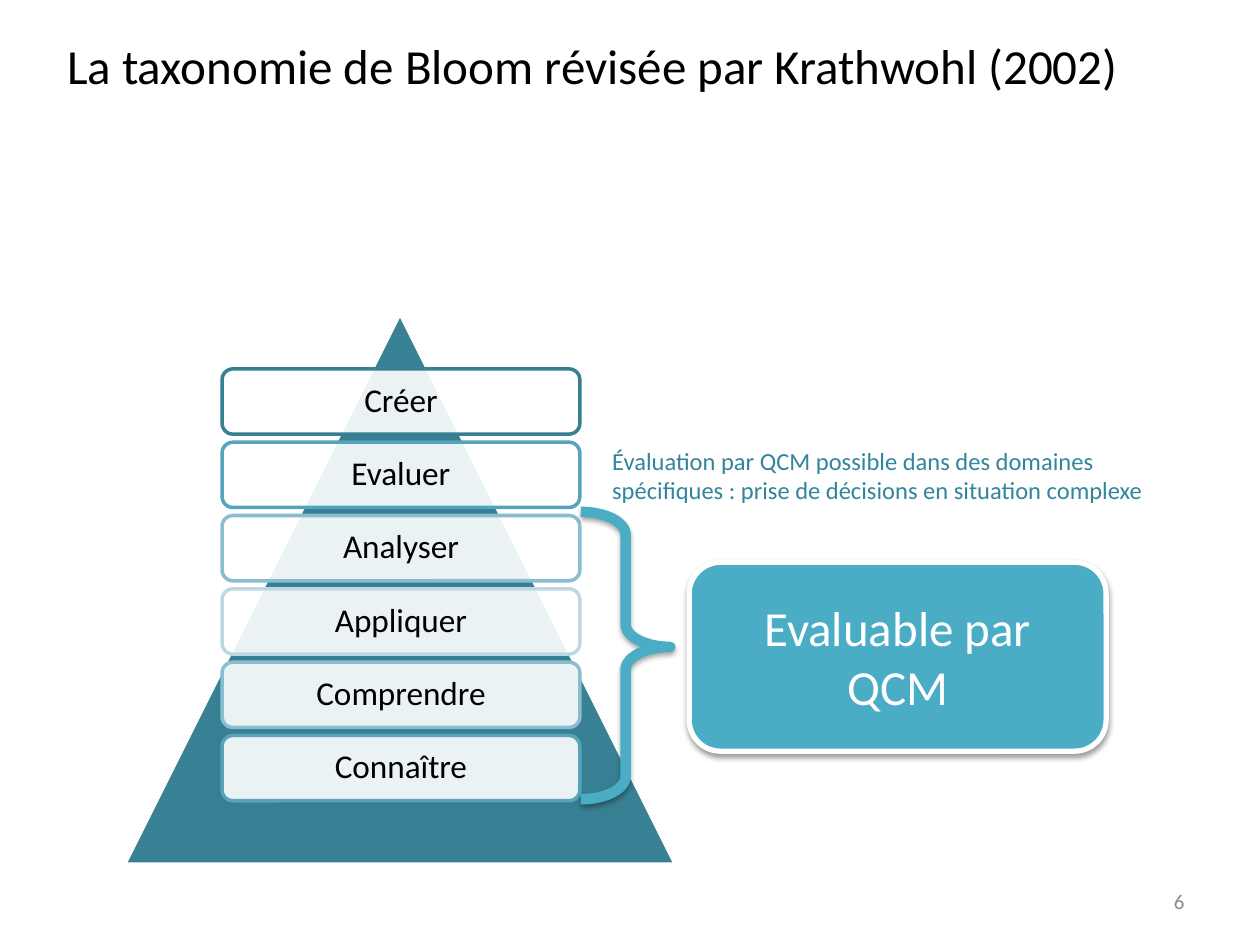
import pptx
import pptx.dml.color
import pptx.enum.shapes
import pptx.enum.text
import pptx.oxml
import pptx.oxml.ns
import pptx.util

Pt = pptx.util.Pt
SHAPE = pptx.enum.shapes.MSO_SHAPE
ALIGN = pptx.enum.text.PP_ALIGN
ANCHOR = pptx.enum.text.MSO_ANCHOR
NAMESPACE = pptx.oxml.ns.nsdecls("a")


def color(hex_string):
    return pptx.dml.color.RGBColor.from_string(hex_string)


def write_text(shape, text, *, size, font="Calibri", fill="000000", align=ALIGN.CENTER,
               anchor=ANCHOR.MIDDLE, inset=None, line_spacing=None):
    frame = shape.text_frame
    frame.word_wrap = True
    frame.auto_size = pptx.enum.text.MSO_AUTO_SIZE.NONE
    frame.vertical_anchor = anchor
    if inset is not None:
        frame.margin_left = frame.margin_right = Pt(inset)
        frame.margin_top = frame.margin_bottom = Pt(inset)
    paragraph = frame.paragraphs[0]
    paragraph.alignment = align
    if line_spacing is not None:
        paragraph.line_spacing = line_spacing
    run = paragraph.add_run()
    run.text = text
    run.font.name = font
    run.font.size = Pt(size)
    run.font.color.rgb = color(fill)


class SlideBuilder:
    """Holds the style and the current slide; positions are in points."""

    accent = "4BACC6"
    dark = "377F92"
    note_color = "31859C"
    muted = "8C8C8C"
    white = "FFFFFF"

    def __init__(self, presentation):
        title_only = presentation.slide_layouts[5]
        self.slide = presentation.slides.add_slide(title_only)

    def title(self, text, left, top, width, height):
        shape = self.slide.shapes.title
        shape.left, shape.top, shape.width, shape.height = map(Pt, (left, top, width, height))
        write_text(shape, text, size=28)

    def shape(self, kind, left, top, width, height, *, fill=None, opacity=None,
              line, line_width, shadow_opacity=None):
        shape = self.slide.shapes.add_shape(kind, *map(Pt, (left, top, width, height)))
        shape.shadow.inherit = False
        if fill is None:
            shape.fill.background()
        else:
            shape.fill.solid()
            shape.fill.fore_color.rgb = color(fill)
        if opacity is not None:
            fill_color = shape.fill._xPr.find(".//" + pptx.oxml.ns.qn("a:srgbClr"))
            fill_color.append(pptx.oxml.parse_xml(
                f'<a:alpha {NAMESPACE} val="{opacity * 1000}"/>'))
        shape.line.color.rgb = color(line)
        shape.line.width = Pt(line_width)
        if shadow_opacity is not None:
            self.drop_shadow(shape, shadow_opacity)
        return shape

    def drop_shadow(self, shape, opacity):
        effects = shape._element.spPr.find(pptx.oxml.ns.qn("a:effectLst"))
        effects.append(pptx.oxml.parse_xml(
            f'<a:outerShdw {NAMESPACE} blurRad="{Pt(3.1)}" dist="{Pt(1.7)}" dir="5400000" '
            f'rotWithShape="0"><a:srgbClr val="000000"><a:alpha val="{opacity * 1000}"/>'
            '</a:srgbClr></a:outerShdw>'))

    def text_box(self, text, left, top, width, height, **text_format):
        box = self.slide.shapes.add_textbox(*map(Pt, (left, top, width, height)))
        write_text(box, text, **text_format)


def main():
    presentation = pptx.Presentation()
    presentation.slide_width, presentation.slide_height = Pt(720), Pt(540)
    builder = SlideBuilder(presentation)
    builder.title("La taxonomie de Bloom révisée par Krathwohl (2002)", 14.4, 9.4, 648, 55.4)

    # Pyramid
    builder.shape(SHAPE.ISOSCELES_TRIANGLE, 71.3, 179.3, 314.6, 314.6,
                  fill=builder.dark, line=builder.white, line_width=2)

    # Levels, from the highest to the lowest
    levels = [("Créer", builder.dark), ("Evaluer", "56A4BC"), ("Analyser", "8ABDCF"),
              ("Appliquer", "BED8E3"), ("Comprendre", "8ABDCF"), ("Connaître", "56A4BC")]
    first_top, pitch = 210.8, 41.9
    for index, (level, outline) in enumerate(levels):
        box = builder.shape(SHAPE.ROUNDED_RECTANGLE, 126.9, first_top + index * pitch, 204.5, 37.3,
                            fill=builder.white, opacity=90, line=outline, line_width=2)
        write_text(box, level, size=19, inset=5.8, line_spacing=0.9)

    # Brace around the levels that can be tested
    brace = builder.shape(SHAPE.RIGHT_BRACE, 331.9, 292.5, 51.1, 164.2,
                          line=builder.accent, line_width=6, shadow_opacity=35)
    brace.adjustments[0], brace.adjustments[1] = 0.255, 0.47

    # Conclusion and note
    conclusion = builder.shape(SHAPE.ROUNDED_RECTANGLE, 393.8, 321.3, 238.3, 108,
                               fill=builder.accent, line=builder.white, line_width=3,
                               shadow_opacity=38)
    write_text(conclusion, "Evaluable par QCM", size=28, fill=builder.white)
    builder.text_box("Évaluation par QCM possible dans des domaines spécifiques : "
                     "prise de décisions en situation complexe", 342.7, 251.3, 334.8, 41,
                     size=14, fill=builder.note_color, align=ALIGN.LEFT, anchor=ANCHOR.TOP)

    # Slide number
    builder.text_box("6", 516, 500.5, 168, 28.8, size=12, fill=builder.muted, align=ALIGN.RIGHT)

    presentation.save("out.pptx")


if __name__ == "__main__":
    main()
